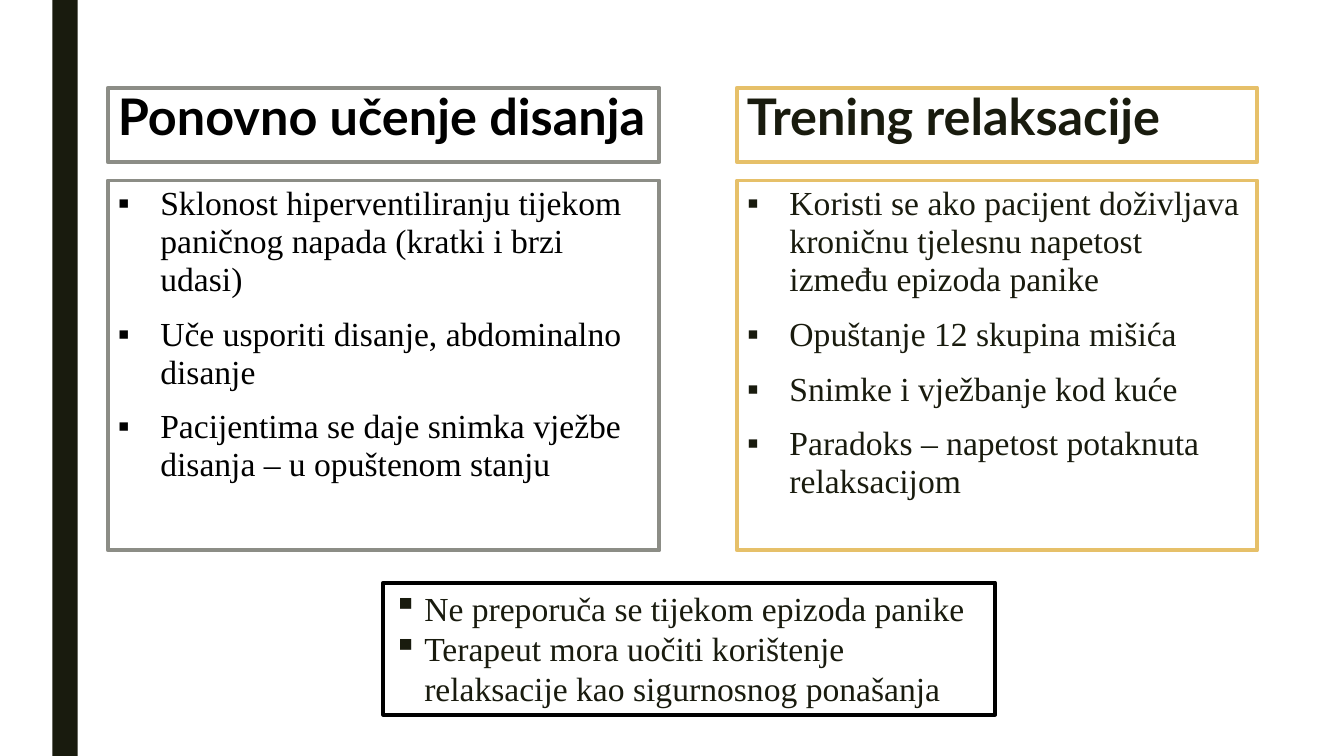
from lxml.etree import SubElement
from pptx import Presentation
from pptx.dml.color import RGBColor
from pptx.enum.shapes import MSO_SHAPE
from pptx.enum.text import MSO_ANCHOR, MSO_AUTO_SIZE, PP_ALIGN
from pptx.oxml.ns import qn
from pptx.util import Inches, Pt

DARK = RGBColor(0x19, 0x1B, 0x0E)
BLACK = RGBColor(0, 0, 0)
WHITE = RGBColor(255, 255, 255)
GRAY = RGBColor(0x8C, 0x8D, 0x86)
GOLD = RGBColor(0xE6, 0xC0, 0x69)

BREATH = [
    "Sklonost hiperventiliranju tijekom paničnog napada (kratki i brzi udasi)",
    "Uče usporiti disanje, abdominalno disanje",
    "Pacijentima se daje snimka vježbe disanja – u opuštenom stanju",
]
RELAX = [
    "Koristi se ako pacijent doživljava kroničnu tjelesnu napetost između epizoda panike",
    "Opuštanje 12 skupina mišića",
    "Snimke i vježbanje kod kuće",
    "Paradoks – napetost potaknuta relaksacijom",
]
NOTES = [
    "Ne preporuča se tijekom epizoda panike",
    "Terapeut mora uočiti korištenje relaksacije kao sigurnosnog ponašanja",
]


def frame(shape, box, edge):
    shape.left, shape.top, shape.width, shape.height = map(Inches, box)
    shape.fill.solid()
    shape.fill.fore_color.rgb = WHITE
    shape.line.color.rgb = edge
    shape.line.width = Pt(2.75)
    text = shape.text_frame
    text.word_wrap = True
    text.auto_size = MSO_AUTO_SIZE.NONE
    text.vertical_anchor = MSO_ANCHOR.TOP
    return text


def style(para, face, size, color, bold=False):
    para.alignment = PP_ALIGN.LEFT
    font = para.font
    font.name, font.size, font.bold = face, Pt(size), bold
    font.color.rgb = color


def heading(shape, box, label, color, edge):
    text = frame(shape, box, edge)
    text.text = label
    para = text.paragraphs[0]
    para.line_spacing = 0.89
    style(para, "Lato", 36, color, True)


def bullets(shape, box, items, color, edge, indent=0.42, pitch=0.94, before=10, after=2):
    text = frame(shape, box, edge)
    text.text = "\n".join(items)
    for i, para in enumerate(text.paragraphs):
        props = para._p.get_or_add_pPr()
        props.set("marL", str(Inches(indent)))
        props.set("indent", str(-Inches(indent)))
        SubElement(props, qn("a:buChar")).set("char", "▪")
        para.line_spacing = pitch
        para.space_before = Pt(before if i else 0)
        para.space_after = Pt(after)
        style(para, "Times New Roman", 24, color)


def column(head, body, left, width, label, items, color, edge):
    heading(head, (left, 0.87, width, 0.74), label, color, edge)
    bullets(body, (left, 1.79, width, 3.67), items, color, edge)


def stripe(slide, box):
    bar = slide.shapes.add_shape(MSO_SHAPE.RECTANGLE, *map(Inches, box))
    bar.shadow.inherit = False
    bar.fill.solid()
    bar.fill.fore_color.rgb = DARK
    bar.line.fill.background()


def main():
    deck = Presentation()
    deck.slide_width, deck.slide_height = Inches(13.33), Inches(7.5)
    slide = deck.slides.add_slide(deck.slide_layouts[3])
    shapes = slide.shapes
    stripe(slide, (0.52, 0, 0.25, 7.5))
    column(shapes.title, slide.placeholders[1], 1.07, 5.47,
           "Ponovno učenje disanja", BREATH, BLACK, GRAY)
    column(shapes.add_textbox(0, 0, 0, 0), slide.placeholders[2], 7.31, 5.16,
           "Trening relaksacije", RELAX, DARK, GOLD)
    bullets(shapes.add_textbox(0, 0, 0, 0), (3.8, 5.78, 6.07, 1.31),
            NOTES, DARK, BLACK, 0.31, 1.0, 0, 0)
    deck.save("out.pptx")


if __name__ == "__main__":
    main()
